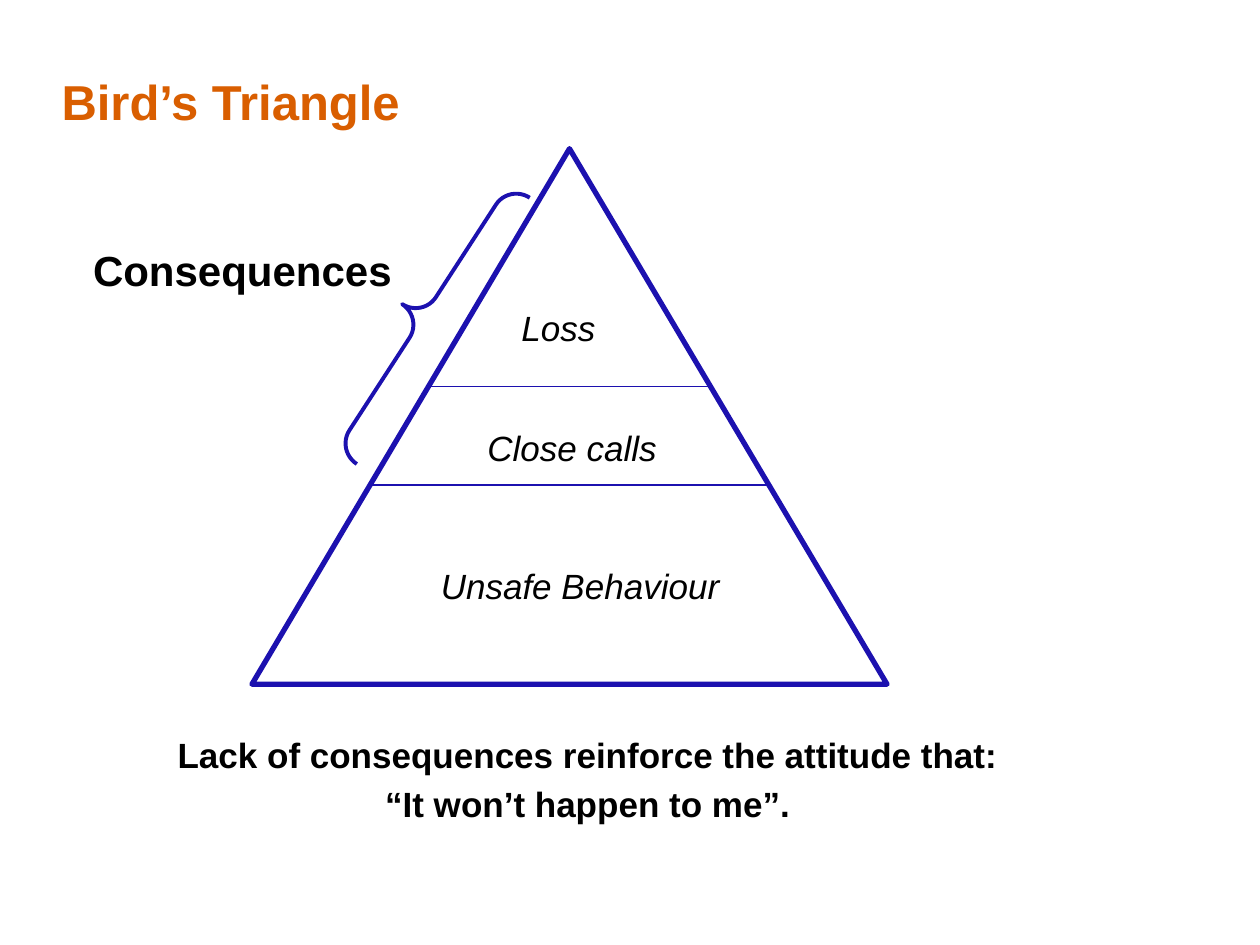
from dataclasses import dataclass

from lxml import etree
from pptx import Presentation
from pptx import util as u
from pptx.dml.color import RGBColor
from pptx.enum import shapes, text
from pptx.oxml import ns

COLUMNS, ROWS = 100, 75
BLUE, ORANGE, BLACK = "1C11AF", "D95E00", "000000"

deck = Presentation()
deck.slide_width, deck.slide_height = u.Inches(10), u.Inches(7.5)
slide = deck.slides.add_slide(deck.slide_layouts[6])


@dataclass(frozen=True)
class Area:
    left: float
    top: float
    width: float
    height: float

    def emu(self) -> tuple[int, int, int, int]:
        return (across(self.left), down(self.top),
                across(self.width), down(self.height))


@dataclass(frozen=True)
class Label:
    lines: tuple[str, ...]
    area: Area
    size: float = 20
    bold: bool = False
    italic: bool = False
    colour: str = BLACK
    align: text.PP_ALIGN = text.PP_ALIGN.LEFT
    anchor: text.MSO_ANCHOR = text.MSO_ANCHOR.TOP
    spacing: float = 0.87
    wrap: bool = False


def across(columns: float) -> int:
    return round(deck.slide_width * columns / COLUMNS)


def down(rows: float) -> int:
    return round(deck.slide_height * rows / ROWS)


def paint(target, colour: str) -> None:
    target.rgb = RGBColor.from_string(colour)


def write(label: Label) -> None:
    frame = slide.shapes.add_textbox(*label.area.emu()).text_frame
    frame.word_wrap = label.wrap
    frame.vertical_anchor = label.anchor
    for index, line in enumerate(label.lines):
        paragraph = frame.add_paragraph() if index else frame.paragraphs[0]
        paragraph.text = line
        paragraph.alignment = label.align
        paragraph.line_spacing = label.spacing
        if index:
            paragraph.space_before = u.Pt(7)
        font = paragraph.font
        font.name, font.size = "Arial", u.Pt(label.size)
        font.bold, font.italic = label.bold, label.italic
        paint(font.color, label.colour)


def outline(kind: shapes.MSO_SHAPE, area: Area, weight: float):
    shape = slide.shapes.add_shape(kind, *area.emu())
    shape.shadow.inherit = False
    shape.fill.background()
    paint(shape.line.color, BLUE)
    shape.line.width = u.Pt(weight)
    return shape


def divide(triangle: Area, row: float) -> None:
    middle = triangle.left + triangle.width / 2
    reach = triangle.width / 2 * (row - triangle.top) / triangle.height
    divider = slide.shapes.add_connector(
        shapes.MSO_CONNECTOR.STRAIGHT,
        across(middle - reach), down(row), across(middle + reach), down(row))
    paint(divider.line.color, BLUE)
    divider.line.width = u.Pt(0.75)
    etree.SubElement(divider._element.spPr, ns.qn("a:effectLst"))


HEADINGS = (
    Label(("Bird’s Triangle",), Area(3.9, 4.7, 43.9, 6.6), 28, bold=True,
          colour=ORANGE, anchor=text.MSO_ANCHOR.MIDDLE, spacing=1, wrap=True),
    Label(("Consequences",), Area(6.4, 19.5, 26, 4.5), 24, bold=True, wrap=True),
    Label(("Lack of consequences reinforce the attitude that:",
           "“It won’t happen to me”."), Area(12.6, 58.2, 68.1, 7.9),
          bold=True, align=text.PP_ALIGN.CENTER),
)
LEVELS = (
    Label(("Loss",), Area(40.4, 24.3, 8, 3.9), italic=True),
    Label(("Close calls",), Area(37.7, 33.8, 15.6, 3.9), italic=True),
    Label(("Unsafe Behaviour",), Area(34, 44.8, 24.3, 3.9), italic=True),
)
TRIANGLE = Area(20, 11.8, 50.4, 42.5)
DIVIDER_ROWS = (38.5, 30.7)

for heading in HEADINGS:
    write(heading)

outline(shapes.MSO_SHAPE.ISOSCELES_TRIANGLE, TRIANGLE, 3)
for divider_row in DIVIDER_ROWS:
    divide(TRIANGLE, divider_row)

for level in LEVELS:
    write(level)

brace = outline(shapes.MSO_SHAPE.RIGHT_BRACE, Area(31.6, 12.6, 3.9, 25.2), 2.25)
brace.adjustments[0] = 0.49
brace.rotation = 33
brace._element.spPr.xfrm.set("flipH", "1")

deck.save("out.pptx")
